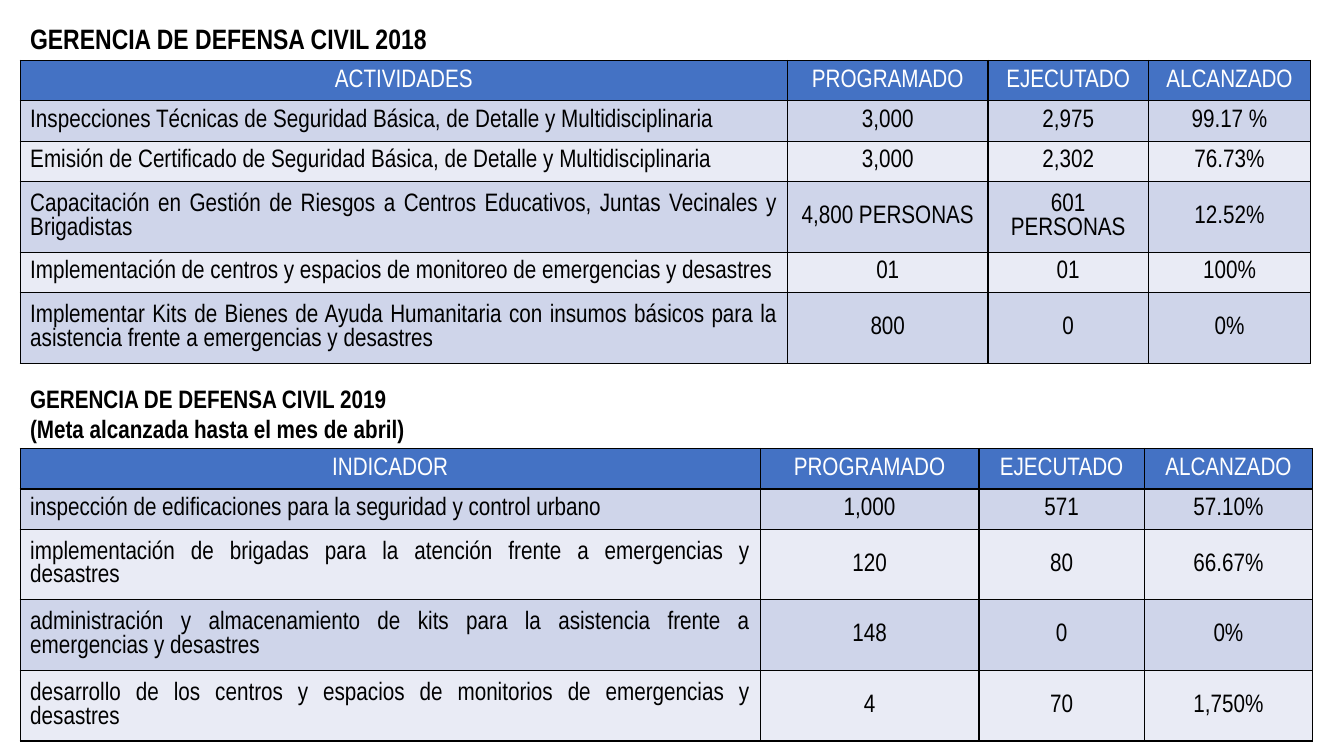
from lxml.etree import SubElement
from pptx import Presentation
from pptx.dml.color import RGBColor
from pptx.enum.text import MSO_ANCHOR, MSO_AUTO_SIZE, PP_ALIGN
from pptx.oxml.ns import qn
from pptx.util import Inches, Pt

BLACK = RGBColor(0x00, 0x00, 0x00)
WHITE = RGBColor(0xFF, 0xFF, 0xFF)
HEADER_BLUE = RGBColor(0x44, 0x72, 0xC4)
BAND_DARK = RGBColor(0xCF, 0xD5, 0xEA)
BAND_LIGHT = RGBColor(0xE9, 0xEB, 0xF5)

RESULT_HEADINGS = ("PROGRAMADO", "EJECUTADO", "ALCANZADO")
ROWS_2018 = [
    ("ACTIVIDADES", *RESULT_HEADINGS),
    ("Inspecciones Técnicas de Seguridad Básica, de Detalle y Multidisciplinaria",
     "3,000", "2,975", "99.17 %"),
    ("Emisión de Certificado de Seguridad Básica, de Detalle y Multidisciplinaria",
     "3,000", "2,302", "76.73%"),
    ("Capacitación en Gestión de Riesgos a Centros Educativos, Juntas Vecinales y Brigadistas",
     "4,800 PERSONAS", "601 PERSONAS", "12.52%"),
    ("Implementación de centros y espacios de monitoreo de emergencias y desastres",
     "01", "01", "100%"),
    ("Implementar Kits de Bienes de Ayuda Humanitaria con insumos básicos para la "
     "asistencia frente a emergencias y desastres",
     "800", "0", "0%"),
]
ROWS_2019 = [
    ("INDICADOR", *RESULT_HEADINGS),
    ("inspección de edificaciones para la seguridad y control urbano",
     "1,000", "571", "57.10%"),
    ("implementación de brigadas para la atención frente a emergencias y desastres",
     "120", "80", "66.67%"),
    ("administración y almacenamiento de kits para la asistencia frente a "
     "emergencias y desastres",
     "148", "0", "0%"),
    ("desarrollo de los centros y espacios de monitorios de emergencias y desastres",
     "4", "70", "1,750%"),
]


class ReportSlide:
    font_name = "Arial Narrow"
    body_size = 18
    left = 0.2

    def __init__(self, page):
        self.page = page

    def style(self, para, size, color, bold=False):
        para.font.name = self.font_name
        para.font.size = Pt(size)
        para.font.bold = bold
        para.font.color.rgb = color

    def title(self, top, height, lines, size):
        box = self.page.shapes.add_textbox(
            Inches(self.left), Inches(top), Inches(4.53), Inches(height))
        frame = box.text_frame
        frame.word_wrap = True
        frame.auto_size = MSO_AUTO_SIZE.SHAPE_TO_FIT_TEXT
        frame.text = "\n".join(lines)
        for para in frame.paragraphs:
            self.style(para, size, BLACK, bold=True)

    def table(self, top, widths, heights, rows):
        frame = self.page.shapes.add_table(
            len(rows), len(widths), Inches(self.left), Inches(top),
            Inches(sum(widths)), Inches(sum(heights)))
        table = frame.table
        for column, width in zip(table.columns, widths):
            column.width = Inches(width)
        for row_index, (values, height) in enumerate(zip(rows, heights)):
            table.rows[row_index].height = Inches(height)
            for column_index, text in enumerate(values):
                self.cell(table.cell(row_index, column_index), text, row_index, column_index)

    def cell(self, cell, text, row_index, column_index):
        is_header = row_index == 0
        is_label = column_index == 0 and not is_header
        cell.text = text
        cell.vertical_anchor = MSO_ANCHOR.MIDDLE
        para = cell.text_frame.paragraphs[0]
        para.alignment = PP_ALIGN.JUSTIFY if is_label else PP_ALIGN.CENTER
        self.style(para, self.body_size, WHITE if is_header else BLACK)
        self.borders(cell)
        cell.fill.solid()
        band = BAND_DARK if row_index % 2 else BAND_LIGHT
        cell.fill.fore_color.rgb = HEADER_BLUE if is_header else band

    def borders(self, cell):
        properties = cell._tc.get_or_add_tcPr()
        for side in ("a:lnL", "a:lnR", "a:lnT", "a:lnB"):
            line = SubElement(properties, qn(side), w=str(Pt(1)))
            fill = SubElement(line, qn("a:solidFill"))
            SubElement(fill, qn("a:srgbClr"), val=str(BLACK))


def main():
    deck = Presentation()
    deck.slide_width = Inches(13.33)
    deck.slide_height = Inches(7.5)
    report = ReportSlide(deck.slides.add_slide(deck.slide_layouts[6]))

    report.title(0.16, 0.44, ["GERENCIA DE DEFENSA CIVIL 2018"], 20)
    report.table(0.6, (7.61, 1.99, 1.59, 1.61),
                 (0.35, 0.39, 0.35, 0.68, 0.38, 0.61), ROWS_2018)
    report.title(3.75, 0.71, ["GERENCIA DE DEFENSA CIVIL 2019",
                              "(Meta alcanzada hasta el mes de abril)"], 18)
    report.table(4.45, (7.34, 2.17, 1.64, 1.67),
                 (0.36, 0.36, 0.63, 0.63, 0.63), ROWS_2019)
    deck.save("out.pptx")


if __name__ == "__main__":
    main()
